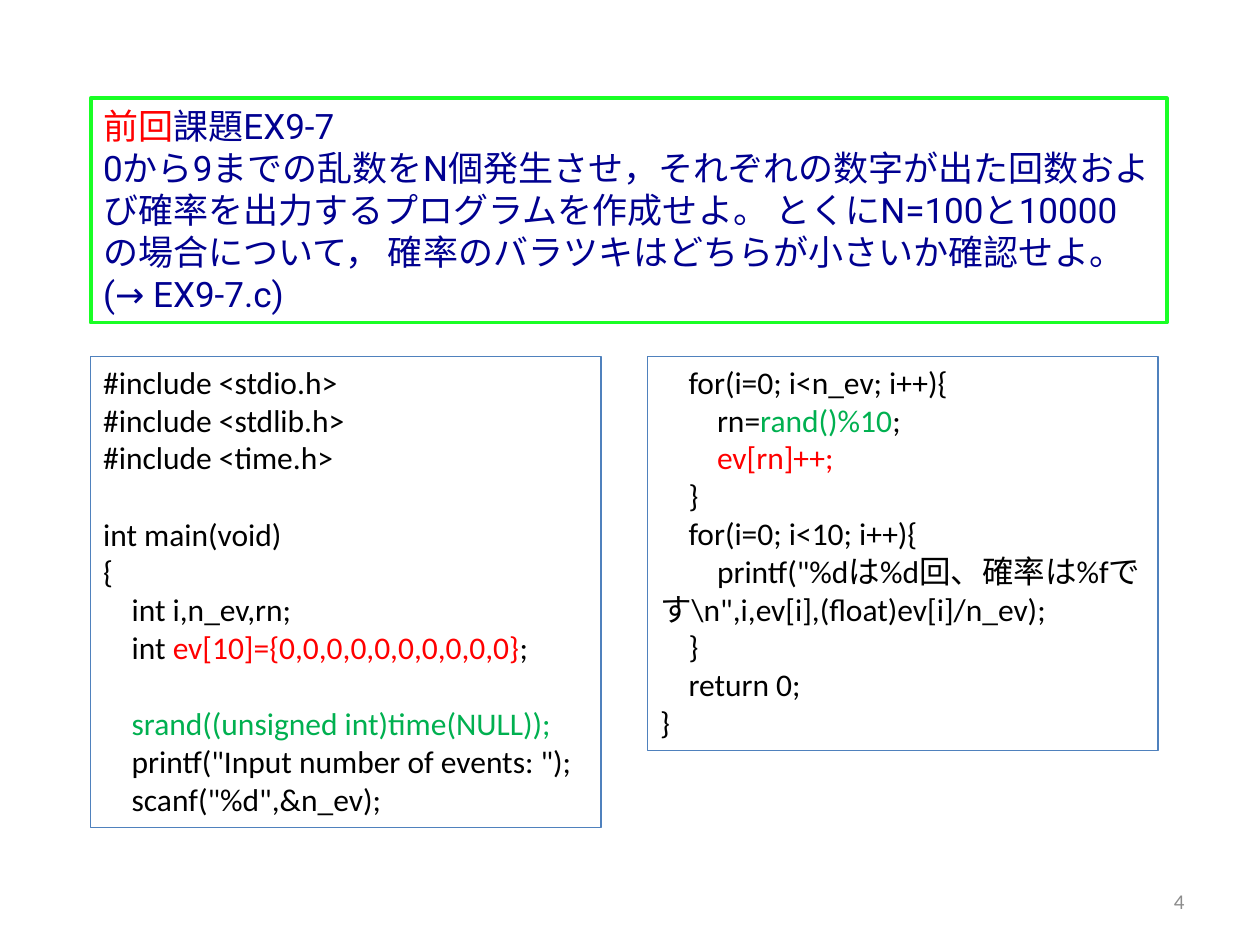
from dataclasses import dataclass

from pptx import Presentation
from pptx.dml.color import RGBColor
from pptx.enum.text import MSO_ANCHOR, MSO_AUTO_SIZE, PP_ALIGN
from pptx.util import Inches, Pt


@dataclass(frozen=True)
class Theme:
    code_font: str = "Calibri"
    task_font: str = "Roboto"
    task_size: int = 20
    code_size: int = 18
    number_size: int = 12
    black: str = "000000"
    navy: str = "000090"
    red: str = "FF0000"
    green: str = "00B050"
    gray: str = "8C8C8C"
    task_border: str = "19FF25"
    code_border: str = "4F81BD"


THEME = Theme()
INDENT_STEP = Inches(0.226)
BLANK_LINE = Pt(22)

TASK = [
    [("前回", THEME.red), ("課題EX9-7", THEME.navy)],
    [("0から9までの乱数をN個発生させ，それぞれの数字が出た回数および確率を出力する"
      "プログラムを作成せよ。 とくにN=100と10000 の場合について， "
      "確率のバラツキはどちらが小さいか確認せよ。 (→ EX9-7.c)", THEME.navy)],
]

# Each code line: indent level, blank line before it, runs of text and colour
SETUP_CODE = [
    (0, False, [("#include <stdio.h>", THEME.black)]),
    (0, False, [("#include <stdlib.h>", THEME.black)]),
    (0, False, [("#include <time.h>", THEME.black)]),
    (0, True, [("int main(void)", THEME.black)]),
    (0, False, [("{", THEME.black)]),
    (1, False, [("int i,n_ev,rn;", THEME.black)]),
    (1, False, [("int ", THEME.black), ("ev[10]={0,0,0,0,0,0,0,0,0,0}", THEME.red),
                (";", THEME.black)]),
    (1, True, [("srand((unsigned int)time(NULL));", THEME.green)]),
    (1, False, [('printf("Input number of events: ");', THEME.black)]),
    (1, False, [('scanf("%d",&n_ev);', THEME.black)]),
]
LOOP_CODE = [
    (1, False, [("for(i=0; i<n_ev; i++){", THEME.black)]),
    (2, False, [("rn=", THEME.black), ("rand()%10", THEME.green), (";", THEME.black)]),
    (2, False, [("ev[rn]++;", THEME.red)]),
    (1, False, [("}", THEME.black)]),
    (1, False, [("for(i=0; i<10; i++){", THEME.black)]),
    (2, False, [('printf("%dは%d回、確率は%fです\\n",i,ev[i],(float)ev[i]/n_ev);',
                 THEME.black)]),
    (1, False, [("}", THEME.black)]),
    (1, False, [("return 0;", THEME.black)]),
    (0, False, [("}", THEME.black)]),
]


def add_text(paragraph, text, *, font, size, color):
    run = paragraph.add_run()
    run.text = text
    run.font.name = font
    run.font.size = Pt(size)
    run.font.color.rgb = RGBColor.from_string(color)


def add_box(slide, box, border=None, border_width=0.75):
    """Add a wrapping text box, with an optional border."""
    shape = slide.shapes.add_textbox(*(Inches(length) for length in box))
    shape.text_frame.word_wrap = True
    if border:
        shape.text_frame.auto_size = MSO_AUTO_SIZE.SHAPE_TO_FIT_TEXT
        shape.line.color.rgb = RGBColor.from_string(border)
        shape.line.width = Pt(border_width)
    return shape.text_frame


def next_paragraph(frame, index):
    return frame.paragraphs[0] if index == 0 else frame.add_paragraph()


def add_task(slide, box):
    frame = add_box(slide, box, THEME.task_border, 2.25)
    for index, runs in enumerate(TASK):
        paragraph = next_paragraph(frame, index)
        for text, color in runs:
            add_text(paragraph, text, font=THEME.task_font,
                     size=THEME.task_size, color=color)


def add_code(slide, box, lines):
    frame = add_box(slide, box, THEME.code_border)
    for index, (level, blank_before, runs) in enumerate(lines):
        paragraph = next_paragraph(frame, index)
        if blank_before:
            paragraph.space_before = BLANK_LINE
        if level:
            # First-line indent, so a wrapped line returns to the margin
            properties = paragraph._p.get_or_add_pPr()
            properties.set("marL", "0")
            properties.set("indent", str(level * INDENT_STEP))
        for text, color in runs:
            add_text(paragraph, text, font=THEME.code_font,
                     size=THEME.code_size, color=color)


def add_slide_number(slide, box, number):
    frame = add_box(slide, box)
    frame.vertical_anchor = MSO_ANCHOR.MIDDLE
    paragraph = frame.paragraphs[0]
    paragraph.alignment = PP_ALIGN.RIGHT
    add_text(paragraph, str(number), font=THEME.code_font,
             size=THEME.number_size, color=THEME.gray)


def main():
    presentation = Presentation()
    presentation.slide_width = Inches(10)
    presentation.slide_height = Inches(7.5)
    slide = presentation.slides.add_slide(presentation.slide_layouts[6])

    # Page number
    add_slide_number(slide, (7.17, 6.95, 2.33, 0.4), 4)
    # Exercise statement
    add_task(slide, (0.72, 0.78, 8.54, 1.78))
    # Program in two columns
    add_code(slide, (0.72, 2.83, 4.05, 3.74), SETUP_CODE)
    add_code(slide, (5.14, 2.83, 4.05, 3.13), LOOP_CODE)

    presentation.save("out.pptx")


if __name__ == "__main__":
    main()
